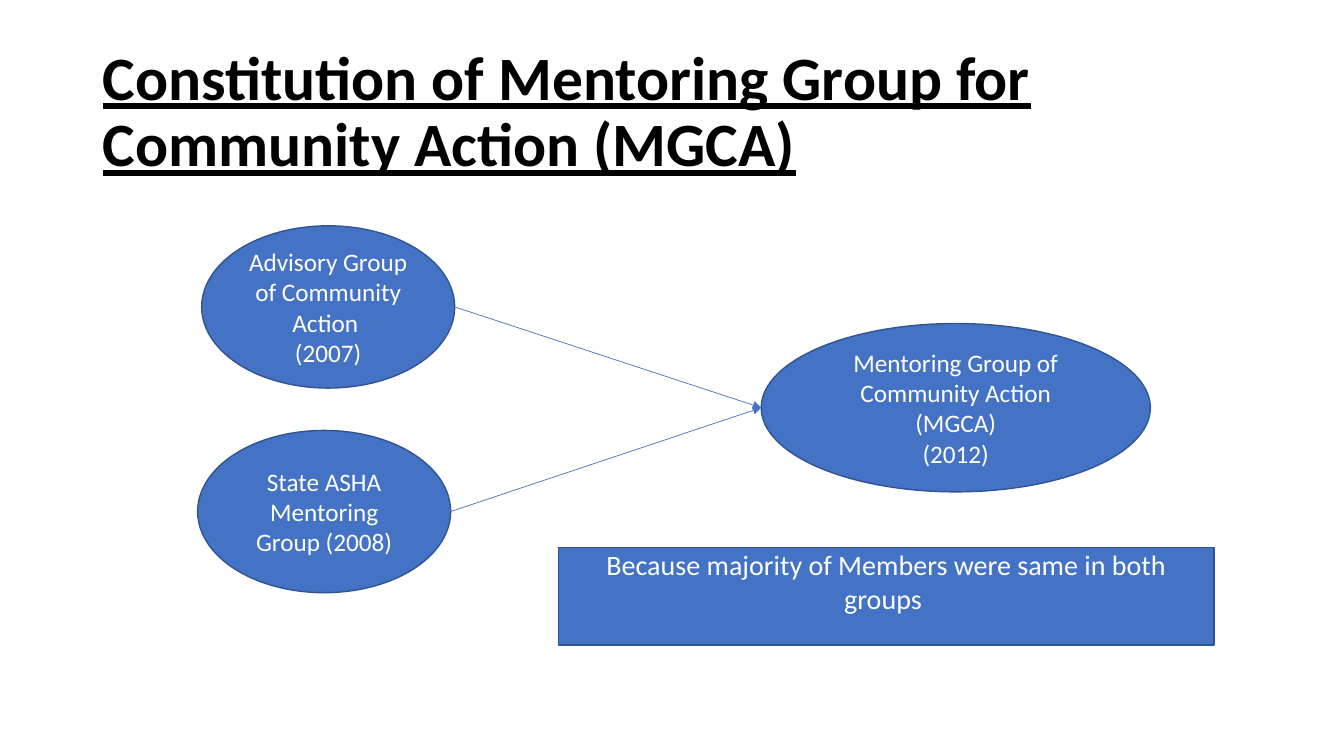
from lxml.etree import SubElement
from pptx import Presentation
from pptx.dml.color import RGBColor
from pptx.enum.shapes import MSO_CONNECTOR as Connector, MSO_SHAPE as Shape
from pptx.enum.text import MSO_ANCHOR as Anchor, PP_ALIGN as Align
from pptx.oxml.ns import qn
from pptx.util import Inches, Pt

BLUE, OUTLINE, WHITE, BLACK = "4472C4", "325491", "FFFFFF", "000000"
FONT = "Calibri"


def paint(color_format, color):
    """Set a colour format to a hex colour."""
    color_format.rgb = RGBColor.from_string(color)


def style_text(frame, size, color, align):
    """Format every run of a text frame."""
    frame.word_wrap = True
    frame.vertical_anchor = Anchor.MIDDLE
    for paragraph in frame.paragraphs:
        paragraph.alignment = align
        for run in paragraph.runs:
            run.font.name = FONT
            run.font.size = Pt(size)
            paint(run.font.color, color)


def add_heading(slide, box, text):
    """Fill and place the title placeholder."""
    heading = slide.shapes.title
    heading.left, heading.top, heading.width, heading.height = map(Inches, box)
    heading.text_frame.text = text
    style_text(heading.text_frame, 44, BLACK, Align.LEFT)
    paragraph = heading.text_frame.paragraphs[0]
    paragraph.line_spacing = 0.9
    font = paragraph.runs[0].font
    font.bold = font.underline = True


def add_block(slide, kind, box, text, size=18):
    """Add a blue outlined shape with centred white text."""
    block = slide.shapes.add_shape(kind, *map(Inches, box))
    block.shadow.inherit = False
    block.fill.solid()
    paint(block.fill.fore_color, BLUE)
    paint(block.line.color, OUTLINE)
    block.line.width = Pt(1)
    block.text_frame.text = text
    style_text(block.text_frame, size, WHITE, Align.CENTER)
    return block


def add_arrow(slide, source, target):
    """Add a thin arrow from the right edge of one shape to the left of another."""
    arrow = slide.shapes.add_connector(
        Connector.STRAIGHT,
        source.left + source.width, source.top + source.height // 2,
        target.left, target.top + target.height // 2)
    paint(arrow.line.color, BLUE)
    arrow.line.width = Pt(0.5)
    SubElement(arrow.line._get_or_add_ln(), qn("a:tailEnd"), type="triangle")
    SubElement(arrow._element.spPr, qn("a:effectLst"))


def add_merger(slide, box):
    """Draw the two founding groups flowing into the merged group."""
    left, top, width, height = box
    group_width, group_height = 2.51, 1.61
    merged_width, merged_height = 3.86, 1.67
    advisory = add_block(
        slide, Shape.OVAL, (left + 0.04, top, group_width, group_height),
        "Advisory Group of Community Action \n(2007)")
    state = add_block(
        slide, Shape.OVAL,
        (left, top + height - group_height, group_width, group_height),
        "State ASHA Mentoring Group (2008)")
    merged = add_block(
        slide, Shape.OVAL,
        (left + width - merged_width, top + 0.97, merged_width, merged_height),
        "Mentoring Group of Community Action (MGCA)\n(2012)")
    for founder in (advisory, state):
        add_arrow(slide, founder, merged)


def add_reason(slide, box, text):
    """Add the reason for the merger, set high in its box."""
    reason = add_block(slide, Shape.RECTANGLE, box, text, 20)
    reason.text_frame.margin_top = 0
    reason.text_frame.margin_bottom = Inches(0.3)


def main():
    """Build and save the slide."""
    deck = Presentation()
    deck.slide_width, deck.slide_height = Inches(13.33), Inches(7.5)
    slide = deck.slides.add_slide(deck.slide_layouts[5])
    add_heading(slide, (0.92, 0.4, 11.5, 1.45),
                "Constitution of Mentoring Group for Community Action (MGCA)")
    add_merger(slide, (1.96, 2.24, 9.45, 3.64))
    add_reason(slide, (5.54, 5.43, 6.5, 0.97),
               "Because majority of Members were same in both groups ")
    deck.save("out.pptx")


if __name__ == "__main__":
    main()
